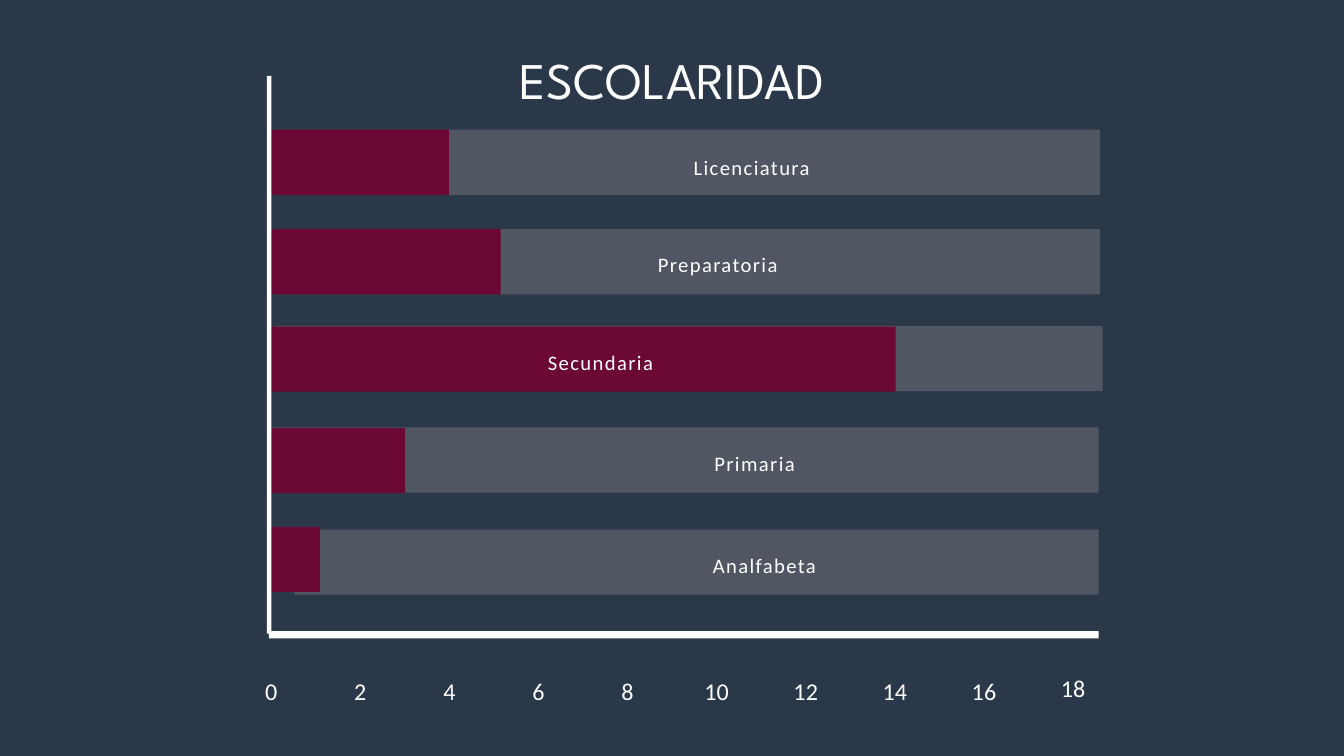
from typing import NamedTuple

from lxml import etree
from pptx import Presentation
from pptx.dml.color import RGBColor
from pptx.enum import shapes, text
from pptx.oxml import ns
from pptx.util import Inches, Pt

NAVY = RGBColor(0x2B, 0x38, 0x49)
WINE = RGBColor(0x6B, 0x08, 0x34)
ROSE = RGBColor(0xD3, 0xBA, 0xBD)
WHITE = RGBColor(0xFF, 0xFF, 0xFF)
AXIS_WHITE = RGBColor(0xFF, 0xFE, 0xFE)

AXIS_LEFT = 4.0
BAR_HEIGHT = 0.97
LABEL_WIDTH = 4.6
TICK_LEFT, TICK_STEP = 3.63, 1.326


class Level(NamedTuple):
    """One schooling level: its full track, its value bar and its label."""
    label: str
    track_left: float
    track_top: float
    track_length: float
    value_top: float
    value_length: float
    label_left: float
    label_top: float
    align: text.PP_ALIGN = text.PP_ALIGN.CENTER


LEVELS = [
    Level("Licenciatura ", 4.02, 1.93, 12.35, 1.93, 2.68, 8.93, 2.16),
    Level("Preparatoria", 4.0, 3.41, 12.37, 3.41, 3.45, 9.79, 3.61,
          text.PP_ALIGN.LEFT),
    Level("Secundaria ", 4.1, 4.85, 12.31, 4.86, 9.33, 6.68, 5.06),
    Level("Primaria", 4.0, 6.36, 12.35, 6.37, 2.03, 8.93, 6.56),
    Level("Analfabeta ", 4.38, 7.88, 11.97, 7.84, 0.76, 9.12, 8.08),
]


def add_bar(slide, left: float, top: float, width: float, height: float,
            color: RGBColor, opacity: int = 100) -> None:
    bar = slide.shapes.add_shape(
        shapes.MSO_SHAPE.RECTANGLE,
        Inches(left), Inches(top), Inches(width), Inches(height))
    bar.shadow.inherit = False
    bar.line.fill.background()
    bar.fill.solid()
    bar.fill.fore_color.rgb = color
    if opacity < 100:
        rgb = bar.fill._xPr.find(".//" + ns.qn("a:srgbClr"))
        etree.SubElement(rgb, ns.qn("a:alpha"), val=str(opacity * 1000))


def write(box, words: str, *, size: float, line: float, font: str = "Calibri",
          color: RGBColor = WHITE, spacing: float = 0,
          align: text.PP_ALIGN = text.PP_ALIGN.CENTER) -> None:
    frame = box.text_frame
    frame.word_wrap = True
    frame.auto_size = text.MSO_AUTO_SIZE.SHAPE_TO_FIT_TEXT
    frame.vertical_anchor = text.MSO_ANCHOR.TOP
    frame.margin_left = frame.margin_right = 0
    frame.margin_top = frame.margin_bottom = 0
    paragraph = frame.paragraphs[0]
    paragraph.alignment = align
    paragraph.line_spacing = Pt(line)
    run = paragraph.add_run()
    run.text = words
    run.font.name = font
    run.font.size = Pt(size)
    run.font.color.rgb = color
    if spacing:
        run.font._element.set("spc", str(round(spacing * 100)))


def add_title(slide, words: str) -> None:
    title = slide.shapes.title
    title.left, title.top = Inches(2.49), Inches(0.57)
    title.width, title.height = Inches(15.02), Inches(1.01)
    write(title, words, size=55, line=77, font="League Spartan")


def add_label(slide, level: Level) -> None:
    box = slide.shapes.add_textbox(
        Inches(level.label_left), Inches(level.label_top),
        Inches(LABEL_WIDTH), Inches(0.47))
    write(box, level.label, size=22.1, line=36.9, spacing=1.5,
          align=level.align)


def add_tick(slide, index: int, top: float) -> None:
    box = slide.shapes.add_textbox(
        Inches(TICK_LEFT + index * TICK_STEP), Inches(top),
        Inches(0.81), Inches(0.51))
    write(box, str(index * 2), size=25.8, line=39.5, color=AXIS_WHITE,
          spacing=0.2)


def main() -> None:
    deck = Presentation()
    deck.slide_width, deck.slide_height = Inches(20), Inches(11.25)
    slide = deck.slides.add_slide(deck.slide_layouts.get_by_name("Title Only"))
    slide.background.fill.solid()
    slide.background.fill.fore_color.rgb = NAVY

    add_title(slide, "ESCOLARIDAD")
    for level in LEVELS:
        add_bar(slide, level.track_left, level.track_top, level.track_length,
                BAR_HEIGHT, ROSE, opacity=23)
    for level in LEVELS:
        add_bar(slide, AXIS_LEFT, level.value_top, level.value_length,
                BAR_HEIGHT, WINE)

    add_bar(slide, 3.97, 1.13, 0.07, 8.3, AXIS_WHITE)
    add_bar(slide, AXIS_LEFT, 9.39, 12.35, 0.11, AXIS_WHITE)

    for level in LEVELS:
        add_label(slide, level)
    for index in range(9):
        add_tick(slide, index, 9.94)
    add_tick(slide, 9, 9.91)

    deck.save("out.pptx")


if __name__ == "__main__":
    main()
